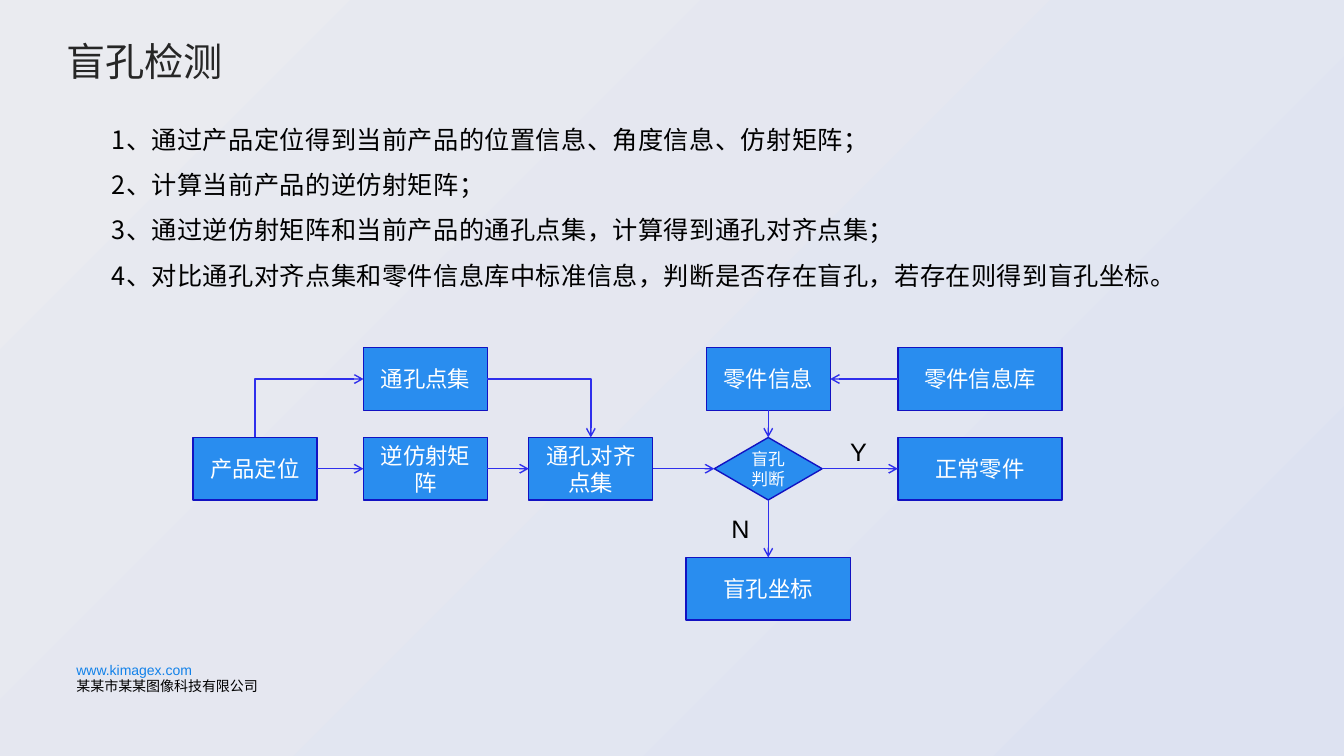
from pptx import Presentation
from pptx.dml.color import RGBColor
from pptx.enum import shapes, text
from pptx.oxml import ns
from pptx.util import Inches, Pt
from lxml import etree

CJK = "Noto Sans CJK SC"
TITLE = "盲孔检测"
STEPS = [
    "1、通过产品定位得到当前产品的位置信息、角度信息、仿射矩阵；",
    "2、计算当前产品的逆仿射矩阵；",
    "3、通过逆仿射矩阵和当前产品的通孔点集，计算得到通孔对齐点集；",
    "4、对比通孔对齐点集和零件信息库中标准信息，判断是否存在盲孔，若存在则得到盲孔坐标。",
]
FOOTER = [("www.kimagex.com", "1181E9"), ("某某市某某图像科技有限公司", "000000")]

COLUMNS = [2.53, 4.22, 5.86, 7.62, 9.72]
ROWS = [3.76, 4.65, 5.84]
NODE_HEIGHT = 0.62
NARROW, WIDE, DIAMOND = 1.23, 1.63, 1.07
NODES = [
    ("产品定位", 0, 1, NARROW),
    ("逆仿射矩阵", 1, 1, NARROW),
    ("通孔对齐点集", 2, 1, NARROW),
    ("通孔点集", 1, 0, NARROW),
    ("盲孔判断", 3, 1, DIAMOND),
    ("零件信息", 3, 0, NARROW),
    ("零件信息库", 4, 0, WIDE),
    ("正常零件", 4, 1, WIDE),
    ("盲孔坐标", 3, 2, WIDE),
]
TOP, LEFT, BOTTOM, RIGHT = range(4)
ARROWS = [
    ("产品定位", RIGHT, "逆仿射矩阵", LEFT),
    ("逆仿射矩阵", RIGHT, "通孔对齐点集", LEFT),
    ("产品定位", TOP, "通孔点集", LEFT),
    ("通孔点集", RIGHT, "通孔对齐点集", TOP),
    ("零件信息库", LEFT, "零件信息", RIGHT),
    ("零件信息", BOTTOM, "盲孔判断", TOP),
    ("通孔对齐点集", RIGHT, "盲孔判断", LEFT),
    ("盲孔判断", RIGHT, "正常零件", LEFT),
    ("盲孔判断", BOTTOM, "盲孔坐标", TOP),
]
BRANCHES = [("Y", 8.26, 4.34), ("N", 7.09, 5.11)]


def color(value):
    return RGBColor.from_string(value)


def format_paragraph(paragraph, size, value, font="Arial", align=text.PP_ALIGN.LEFT):
    paragraph.alignment = align
    for run in paragraph.runs:
        run.font.size = Pt(size)
        run.font.name = font
        run.font.color.rgb = color(value)
        east_asian = etree.SubElement(run.font._element, ns.qn("a:ea"))
        east_asian.set("typeface", CJK)


def add_text(slide, lines, left, top, width, height):
    box = slide.shapes.add_textbox(*map(Inches, (left, top, width, height)))
    box.text_frame.word_wrap = True
    box.text_frame.text = "\n".join(lines)
    return box.text_frame


def add_node(slide, label, column, row, width):
    is_decision = width == DIAMOND
    kind = shapes.MSO_SHAPE.FLOWCHART_DECISION if is_decision else shapes.MSO_SHAPE.RECTANGLE
    left = COLUMNS[column] - width / 2
    top = ROWS[row] - NODE_HEIGHT / 2
    shape = slide.shapes.add_shape(kind, *map(Inches, (left, top, width, NODE_HEIGHT)))
    shape.shadow.inherit = False
    shape.fill.solid()
    shape.fill.fore_color.rgb = color("298DEF")
    shape.line.color.rgb = color("1212C2")
    shape.line.width = Pt(1)
    frame = shape.text_frame
    frame.word_wrap = True
    frame.vertical_anchor = text.MSO_ANCHOR.MIDDLE
    if is_decision:
        frame.margin_left = frame.margin_right = Inches(0.05)
    frame.text = label
    format_paragraph(frame.paragraphs[0], 12 if is_decision else 16, "FFFFFF",
                     align=text.PP_ALIGN.CENTER)
    return shape


def bend(connector, leaves_upward):
    properties = connector._element.spPr
    geometry = properties.find(ns.qn("a:prstGeom"))
    geometry.set("prst", "bentConnector2")
    if leaves_upward:
        left, top = connector.left, connector.top
        width, height = connector.width, connector.height
        transform = properties.find(ns.qn("a:xfrm"))
        transform.attrib.pop("flipV", None)
        transform.set("rot", str(270 * 60000))
        connector.left = left + (width - height) // 2
        connector.top = top + (height - width) // 2
        connector.width, connector.height = height, width


def add_arrow(slide, start, start_site, end, end_site):
    bent = (start_site - end_site) % 2 == 1
    kind = shapes.MSO_CONNECTOR.ELBOW if bent else shapes.MSO_CONNECTOR.STRAIGHT
    connector = slide.shapes.add_connector(kind, 0, 0, 0, 0)
    connector.begin_connect(start, start_site)
    connector.end_connect(end, end_site)
    if bent:
        bend(connector, start_site == TOP)
    connector.line.color.rgb = color("2F2FEC")
    connector.line.width = Pt(1)
    etree.SubElement(connector.line._get_or_add_ln(), ns.qn("a:tailEnd")).set("type", "arrow")
    etree.SubElement(connector._element.spPr, ns.qn("a:effectLst"))


def main():
    presentation = Presentation()
    presentation.slide_width = Inches(13.33)
    presentation.slide_height = Inches(7.5)
    slide = presentation.slides.add_slide(presentation.slide_layouts[5])

    background = slide.background.fill
    background.gradient()
    background.gradient_angle = 315
    for stop, value in zip(background.gradient_stops, ("EAEBF0", "DDE2F1")):
        stop.color.rgb = color(value)

    title = slide.shapes.title
    title.left, title.top, title.width, title.height = map(Inches, (0.66, 0.37, 1.56, 0.47))
    frame = title.text_frame
    frame.margin_left = frame.margin_top = frame.margin_right = frame.margin_bottom = 0
    frame.word_wrap = False
    frame.auto_size = text.MSO_AUTO_SIZE.NONE
    frame.vertical_anchor = text.MSO_ANCHOR.TOP
    frame.text = TITLE
    format_paragraph(frame.paragraphs[0], 28, "262626", CJK)

    for paragraph in add_text(slide, STEPS, 0.66, 1.03, 11.51, 5.45).paragraphs:
        format_paragraph(paragraph, 18, "000000", CJK)
        paragraph.line_spacing = 1.5
        paragraph._p.get_or_add_pPr().set("indent", str(Inches(0.35)))
        paragraph.runs[0].font._element.set("spc", "30")

    footer = add_text(slide, [line for line, _ in FOOTER], 0.66, 6.51, 2.2, 0.44)
    for paragraph, (_, value) in zip(footer.paragraphs, FOOTER):
        format_paragraph(paragraph, 10, value)

    nodes = {node[0]: add_node(slide, *node) for node in NODES}
    for start, start_site, end, end_site in ARROWS:
        add_arrow(slide, nodes[start], start_site, nodes[end], end_site)

    for label, left, top in BRANCHES:
        frame = add_text(slide, [label], left, top, 0.51, 0.27)
        frame.vertical_anchor = text.MSO_ANCHOR.MIDDLE
        format_paragraph(frame.paragraphs[0], 18, "000000", align=text.PP_ALIGN.CENTER)

    presentation.save("out.pptx")


if __name__ == "__main__":
    main()
